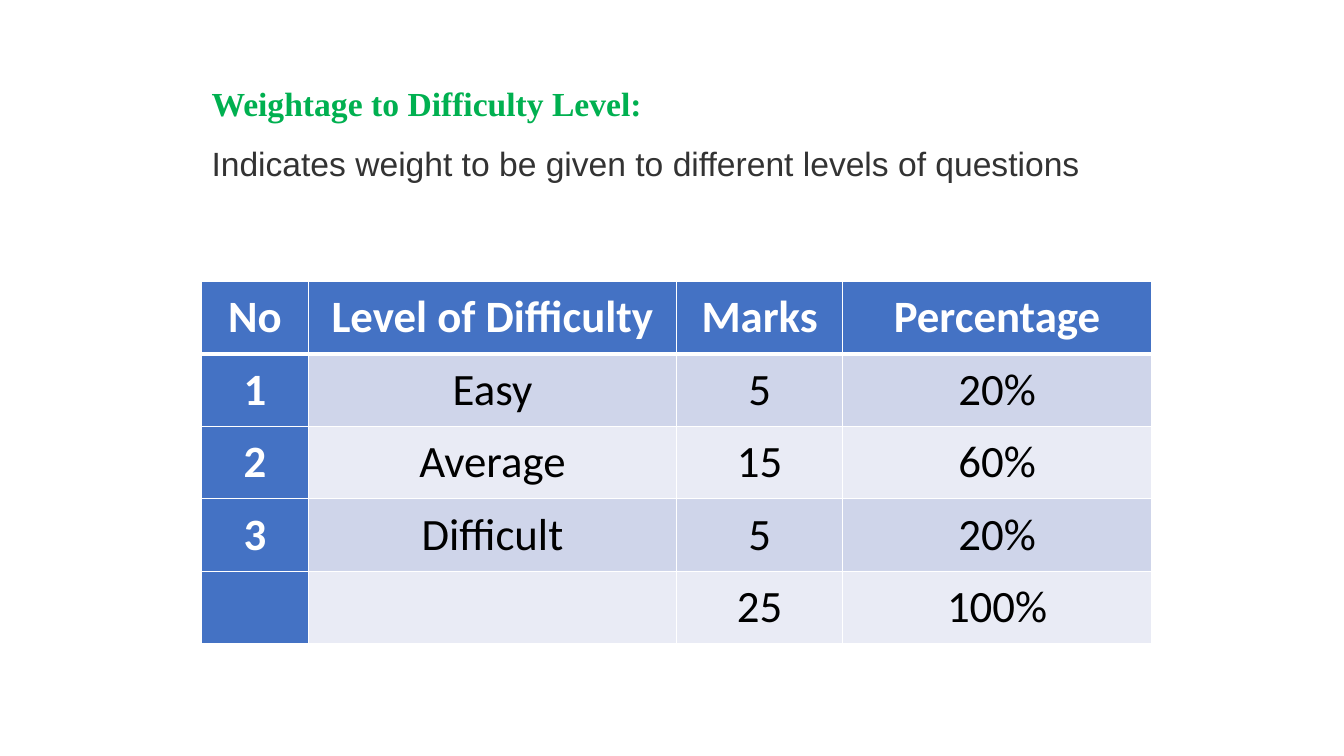
from pptx import Presentation
from pptx.dml.color import RGBColor
from pptx.enum.text import MSO_ANCHOR, PP_ALIGN
from pptx.oxml import parse_xml
from pptx.oxml.ns import nsdecls
from pptx.util import Inches, Pt

GREEN = RGBColor(0x00, 0xB0, 0x50)
GRAY = RGBColor(0x33, 0x33, 0x33)
BLUE = RGBColor(0x44, 0x72, 0xC4)
BAND_DARK = RGBColor(0xCF, 0xD5, 0xEA)
BAND_LIGHT = RGBColor(0xE9, 0xEB, 0xF5)
WHITE = RGBColor(0xFF, 0xFF, 0xFF)
BLACK = RGBColor(0x00, 0x00, 0x00)


def add_run(p, text, font, size, color, bold, space_after):
    p.line_spacing = 1.07
    p.space_after = Pt(space_after)
    r = p.add_run()
    r.text = text
    r.font.name = font
    r.font.size = Pt(size)
    r.font.color.rgb = color
    r.font.bold = bold


def set_border(cell, side, width):
    # Borders come before the fill in the cell properties
    cell._tc.get_or_add_tcPr().append(parse_xml(
        f'<a:{side} {nsdecls("a")} w="{Pt(width)}"><a:solidFill>'
        f'<a:srgbClr val="{WHITE}"/></a:solidFill></a:{side}>'))


prs = Presentation()
prs.slide_width, prs.slide_height = Inches(13.33), Inches(7.5)
s = prs.slides.add_slide(prs.slide_layouts[6])

# Heading and explanation
tf = s.shapes.add_textbox(Inches(2), Inches(0.76), Inches(9.43), Inches(1.1)).text_frame
tf.word_wrap = True
tf.vertical_anchor = MSO_ANCHOR.MIDDLE
add_run(tf.paragraphs[0], "Weightage to Difficulty Level:", "Times New Roman", 24, GREEN, True, 12)
add_run(tf.add_paragraph(), "Indicates weight to be given to different levels of questions",
        "Arial", 24, GRAY, False, 12)

# Difficulty table
rows = [
    ("No", "Level of Difficulty", "Marks", "Percentage"),
    ("1", "Easy", "5", "20%"),
    ("2", "Average", "15", "60%"),
    ("3", "Difficult", "5", "20%"),
    ("", "", "25", "100%"),
]
widths = [1.06, 3.65, 1.65, 3.06]
table = s.shapes.add_table(len(rows), len(widths), Inches(2), Inches(2.79),
                           Inches(sum(widths)), Inches(0.72 * len(rows))).table
table.first_col = True
for column, width in zip(table.columns, widths):
    column.width = Inches(width)

for i, row in enumerate(rows):
    table.rows[i].height = Inches(0.72)
    for j, text in enumerate(row):
        cell = table.cell(i, j)
        header = i == 0 or j == 0
        for side in ("lnL", "lnR", "lnT", "lnB"):
            thick = (i == 0 and side == "lnB") or (i == 1 and side == "lnT")
            set_border(cell, side, 3 if thick else 1)
        cell.fill.solid()
        cell.fill.fore_color.rgb = BLUE if header else BAND_DARK if i % 2 else BAND_LIGHT
        if text:
            p = cell.text_frame.paragraphs[0]
            p.alignment = PP_ALIGN.CENTER
            add_run(p, text, "Calibri", 32, WHITE if header else BLACK, header, 8)

prs.save("out.pptx")
